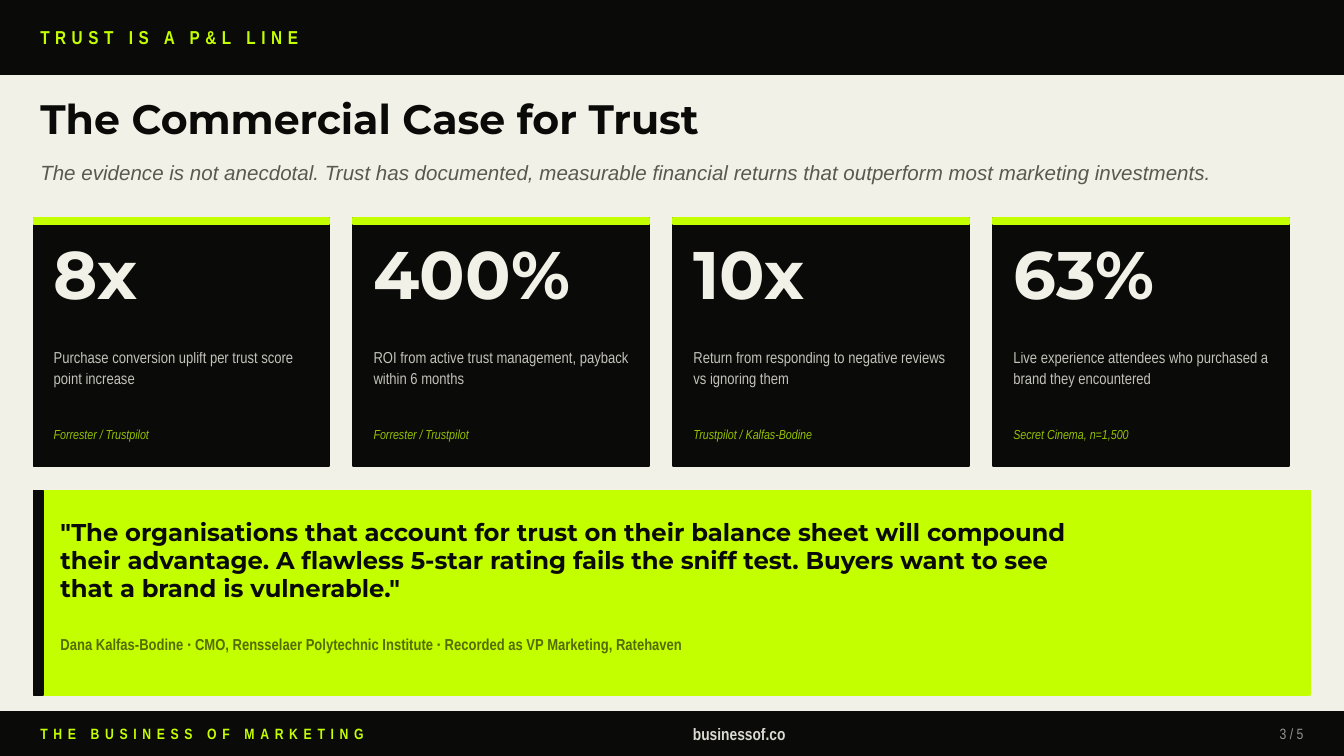
"""Build the slide on the commercial case for trust."""
from lxml import etree
from pptx import Presentation, util as u
from pptx.dml.color import RGBColor
from pptx.enum import shapes, text
from pptx.oxml.ns import qn

PX = 9144
WIDE = 1000
HEX = {"ink": "0A0A08", "lime": "C4FF00", "cream": "F2F1E8", "gray": "5A5950"}
HEAD, BODY, SLIM = "Montserrat", "Arial", "Arial Narrow"
LEFT, MID, RIGHT = text.PP_ALIGN.LEFT, text.PP_ALIGN.CENTER, text.PP_ALIGN.RIGHT

TITLE = "The Commercial Case for Trust"
TAG = "TRUST IS A P&L LINE"
LEAD = ("The evidence is not anecdotal. Trust has documented, measurable financial "
        "returns that outperform most marketing investments.")
CARDS = [
    ("8x", "Purchase conversion uplift per trust score point increase",
     "Forrester / Trustpilot"),
    ("400%", "ROI from active trust management, payback within 6 months",
     "Forrester / Trustpilot"),
    ("10x", "Return from responding to negative reviews vs ignoring them",
     "Trustpilot / Kalfas-Bodine"),
    ("63%", "Live experience attendees who purchased a brand they encountered",
     "Secret Cinema, n=1,500"),
]
QUOTE = ('"The organisations that account for trust on their balance sheet will '
         "compound their advantage. A flawless 5-star rating fails the sniff test. "
         'Buyers want to see that a brand is vulnerable."')
SPEAKER = ("Dana Kalfas-Bodine · CMO, Rensselaer Polytechnic Institute · "
           "Recorded as VP Marketing, Ratehaven")
FOOT = ("THE BUSINESS OF MARKETING", "businessof.co", "3 / 5")

CARD_X, CARD_Y, CARD_W, CARD_H = 25, 162, 220, 185
STEP, PAD = 238, 15


def rgb(name):
    return RGBColor.from_string(HEX[name])


def scale(*box):
    return [u.Emu(n * PX) for n in box]


def rect(slide, box, color):
    shape = slide.shapes.add_shape(shapes.MSO_SHAPE.RECTANGLE, *scale(*box))
    shape.shadow.inherit = False
    shape.fill.solid()
    shape.fill.fore_color.rgb = rgb(color)
    shape.line.color.rgb = rgb(color)
    shape.line.width = u.Pt(1)


def write(shape, words, face, size, color, bold=False, italic=False,
          alpha=100, track=0, lead=None, align=LEFT):
    frame = shape.text_frame
    frame.word_wrap = True
    frame.auto_size = text.MSO_AUTO_SIZE.NONE
    frame.vertical_anchor = text.MSO_ANCHOR.MIDDLE
    frame.margin_left = frame.margin_top = 0
    frame.margin_right = frame.margin_bottom = 0
    frame.text = words
    para = frame.paragraphs[0]
    para.alignment = align
    if lead:
        para.line_spacing = lead
    font = para.font
    font.name, font.size = face, u.Pt(size)
    font.bold, font.italic = bold, italic
    font.color.rgb = rgb(color)
    props = font._element if hasattr(font, "_element") else font._rPr
    if track:
        props.set("spc", str(track * 100))
    if alpha < 100:
        tint = props.find(".//" + qn("a:srgbClr"))
        etree.SubElement(tint, qn("a:alpha")).set("val", str(alpha * 1000))


def label(slide, box, *args, **style):
    write(slide.shapes.add_textbox(*scale(*box)), *args, **style)


def card(slide, left, stat, note, source):
    rect(slide, (left, CARD_Y, CARD_W, CARD_H), "ink")
    rect(slide, (left, CARD_Y, CARD_W, 5), "lime")
    x, wide = left + PAD, CARD_W - 2 * PAD
    label(slide, (x, 170, wide, 65), stat, HEAD, 36, "cream", bold=True)
    label(slide, (x, 238, wide, 70), note, SLIM, 8.5, "cream", alpha=80, lead=1.1)
    label(slide, (x, 312, wide, 22), source, SLIM, 7, "lime", italic=True, alpha=75)


def main():
    deck = Presentation()
    deck.slide_width = u.Emu(WIDE * PX)
    deck.slide_height = u.Emu(WIDE * PX * 9 // 16)
    slide = deck.slides.add_slide(deck.slide_layouts[5])
    slide.background.fill.solid()
    slide.background.fill.fore_color.rgb = rgb("cream")

    title = slide.shapes.title
    title.left, title.top, title.width, title.height = scale(30, 65, 940, 45)
    write(title, TITLE, HEAD, 22, "ink", bold=True)

    rect(slide, (0, 0, WIDE, 55), "ink")
    label(slide, (30, 0, 900, 55), TAG, SLIM, 10, "lime", bold=True, track=3)
    label(slide, (30, 113, 940, 30), LEAD, BODY, 11, "gray", italic=True)

    for i, item in enumerate(CARDS):
        card(slide, CARD_X + i * STEP, *item)

    rect(slide, (25, 365, 950, 152), "lime")
    rect(slide, (25, 365, 7, 152), "ink")
    label(slide, (45, 375, 750, 85), QUOTE, HEAD, 13, "ink", bold=True, lead=0.95)
    label(slide, (45, 465, 750, 28), SPEAKER, SLIM, 8.5, "ink", bold=True, alpha=60)

    rect(slide, (0, 530, WIDE, 33), "ink")
    brand, site, page = FOOT
    label(slide, (30, 532, 400, 28), brand, SLIM, 8, "lime", bold=True, track=3)
    label(slide, (380, 532, 340, 28), site, SLIM, 9, "cream", bold=True,
          alpha=90, align=MID)
    label(slide, (880, 532, 90, 28), page, SLIM, 8, "cream", alpha=60, align=RIGHT)
    deck.save("out.pptx")


if __name__ == "__main__":
    main()
